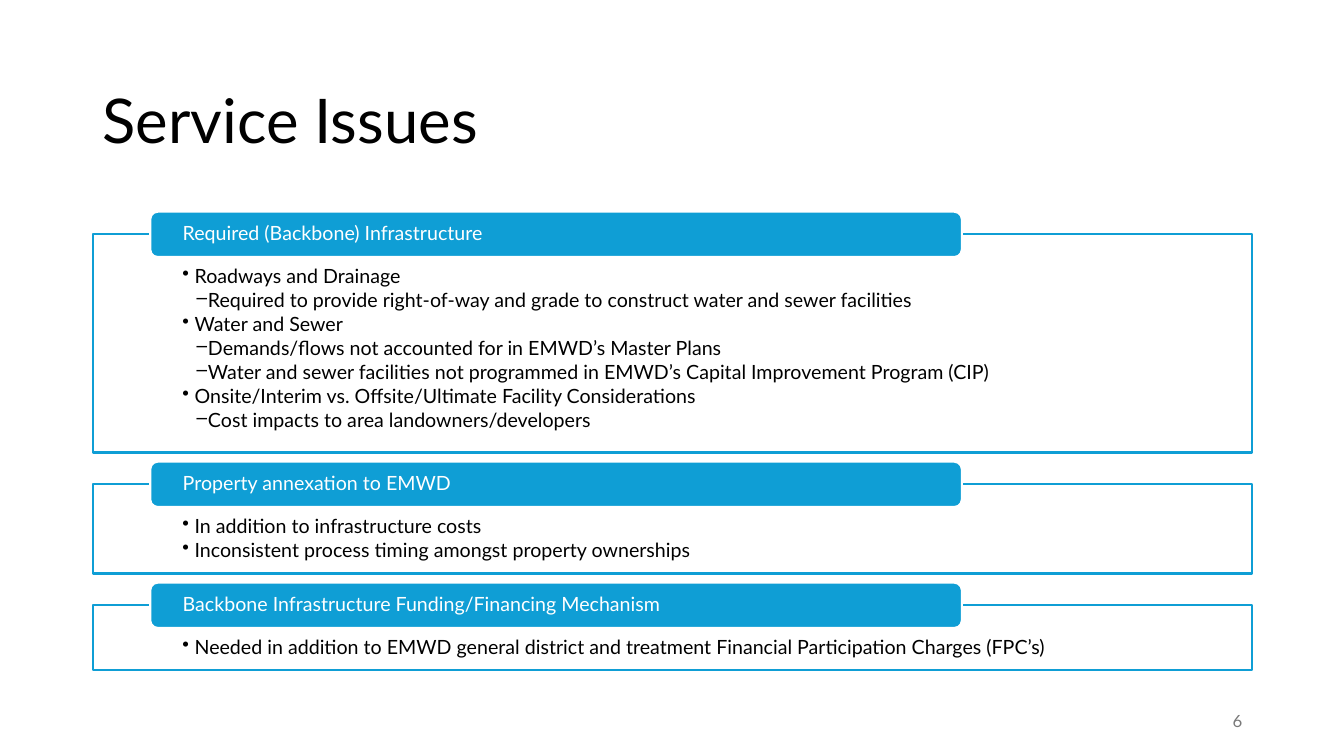
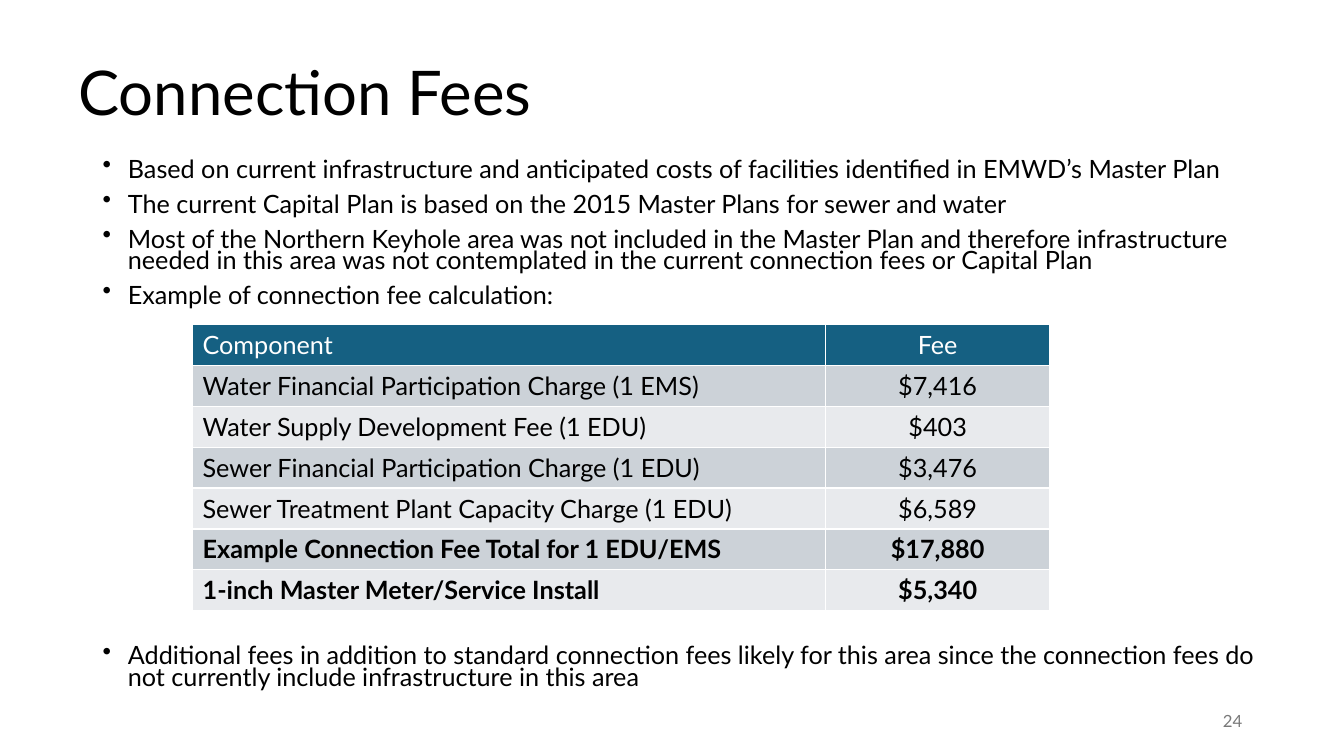
from dataclasses import dataclass
from typing import Any, NamedTuple

from lxml.etree import SubElement
from pptx import Presentation
from pptx.dml.color import RGBColor
from pptx.enum.shapes import MSO_SHAPE as Shape
from pptx.enum.text import MSO_ANCHOR as Anchor, PP_ALIGN as Align
from pptx.oxml.ns import qn
from pptx.util import Emu, Pt

EMU_PER_PX = 9144  # 100 px to the inch


@dataclass(frozen=True)
class Theme:
    font: str = "Lato"
    black: str = "000000"
    white: str = "FFFFFF"
    accent: str = "0F9ED5"
    grey: str = "797979"
    table_header: str = "156082"
    table_bands: tuple[str, str] = ("CCD2D8", "E8EAED")
    title_size: int = 44
    body_size: int = 18
    panel_size: int = 14
    number_size: int = 12


THEME = Theme()


class Box(NamedTuple):
    left: int
    top: int
    width: int
    height: int


class TextStyle(NamedTuple):
    size: int
    color: str = THEME.black
    bold: bool = False
    align: Align = Align.LEFT
    line_spacing: float = 1.0
    before: float = 0
    after: float = 0


class Bullet(NamedTuple):
    character: str
    indent: int
    hanging: int


class Line(NamedTuple):
    text: str
    bullet: Bullet | None = None


class Panel(NamedTuple):
    heading: str
    height: int
    lines: list[Line]


class Fee(NamedTuple):
    component: str
    amount: str
    bold: bool = False


TITLE = TextStyle(THEME.title_size, line_spacing=0.9)
NUMBER = TextStyle(THEME.number_size, THEME.grey, align=Align.RIGHT)
HEADING = TextStyle(THEME.panel_size, THEME.white, line_spacing=0.9)
PANEL_TEXT = TextStyle(THEME.panel_size, line_spacing=0.9, after=2.1)
BODY = TextStyle(THEME.body_size, line_spacing=0.7, before=10)

POINT = Bullet("•", 12, 12)
DASH = Bullet("‒", 25, 12)
BODY_POINT = Bullet("•", 25, 25)

NUMBER_BOX = Box(942, 695, 300, 40)
DEFAULT_MARGINS = (10, 5, 10, 5)

PANEL_LEFT, PANEL_TOP, PANEL_WIDTH, PANEL_GAP = 92, 232, 1150, 31
PANEL_MARGINS = (89, 32, 89, 11)
HEADING_LEFT, HEADING_RISE, HEADING_WIDTH, HEADING_HEIGHT = 149, 22, 805, 45
HEADING_MARGINS = (30, 0, 30, 0)

PANELS = [
    Panel("Required (Backbone) Infrastructure", 217, [
        Line("Roadways and Drainage", POINT),
        Line("Required to provide right-of-way and grade to construct water and sewer facilities", DASH),
        Line("Water and Sewer", POINT),
        Line("Demands/flows not accounted for in EMWD’s Master Plans", DASH),
        Line("Water and sewer facilities not programmed in EMWD’s Capital Improvement Program (CIP)", DASH),
        Line("Onsite/Interim vs. Offsite/Ultimate Facility Considerations", POINT),
        Line("Cost impacts to area landowners/developers", DASH),
    ]),
    Panel("Property annexation to EMWD", 89, [
        Line("In addition to infrastructure costs", POINT),
        Line("Inconsistent process timing amongst property ownerships", POINT),
    ]),
    Panel("Backbone Infrastructure Funding/Financing Mechanism", 65, [
        Line("Needed in addition to EMWD general district and treatment "
             "Financial Participation Charges (FPC’s)", POINT),
    ]),
]

FEE_BASIS = [
    Line("Based on current infrastructure and anticipated costs of facilities "
         "identified in EMWD’s Master Plan", BODY_POINT),
    Line("The current Capital Plan is based on the 2015 Master Plans for sewer and water", BODY_POINT),
    Line("Most of the Northern Keyhole area was not included in the Master Plan and therefore "
         "infrastructure needed in this area was not contemplated in the current connection "
         "fees or Capital Plan", BODY_POINT),
    Line("Example of connection fee calculation:", BODY_POINT),
]
ADDITIONAL_FEES = [
    Line("Additional fees in addition to standard connection fees likely for this area since "
         "the connection fees do not currently include infrastructure in this area", BODY_POINT),
]
FEES = [
    Fee("Component", "Fee"),
    Fee("Water Financial Participation Charge (1 EMS)", "$7,416"),
    Fee("Water Supply Development Fee (1 EDU)", "$403"),
    Fee("Sewer Financial Participation Charge (1 EDU)", "$3,476"),
    Fee("Sewer Treatment Plant Capacity Charge (1 EDU)", "$6,589"),
    Fee("Example Connection Fee Total for 1 EDU/EMS", "$17,880", True),
    Fee("1-inch Master Meter/Service Install", "$5,340", True),
]
FEE_BOX = Box(191, 322, 850, 284)
FEE_COLUMNS = (628, 222)


def px(length: int) -> Emu:
    return Emu(length * EMU_PER_PX)


def place(box: Box) -> tuple[Emu, ...]:
    return tuple(px(length) for length in box)


def set_format(target: Any, values: dict[str, Any]) -> None:
    for name, value in values.items():
        setattr(target, name, value)


def add_bullet(paragraph: Any, bullet: Bullet) -> None:
    properties = paragraph._p.get_or_add_pPr()
    properties.set("marL", str(px(bullet.indent)))
    properties.set("indent", str(-px(bullet.hanging)))
    SubElement(properties, qn("a:buChar"), char=bullet.character)


def write_lines(frame: Any, lines: list[Line], style: TextStyle) -> None:
    for index, line in enumerate(lines):
        paragraph = frame.add_paragraph() if index else frame.paragraphs[0]
        if line.bullet:
            add_bullet(paragraph, line.bullet)
        set_format(paragraph, {
            "alignment": style.align,
            "line_spacing": style.line_spacing,
            "space_before": Pt(style.before if index else 0),
            "space_after": Pt(style.after),
        })
        run = paragraph.add_run()
        run.text = line.text
        set_format(run.font, {"name": THEME.font, "size": Pt(style.size), "bold": style.bold})
        run.font.color.rgb = RGBColor.from_string(style.color)


def fill_frame(frame: Any, lines: list[Line], style: TextStyle, anchor: Anchor,
               margins: tuple[int, ...] = DEFAULT_MARGINS) -> None:
    left, top, right, bottom = (px(margin) for margin in margins)
    set_format(frame, {
        "word_wrap": True, "vertical_anchor": anchor,
        "margin_left": left, "margin_top": top, "margin_right": right, "margin_bottom": bottom,
    })
    write_lines(frame, lines, style)


def add_text(slide: Any, box: Box, lines: list[Line], style: TextStyle,
             anchor: Anchor = Anchor.TOP) -> None:
    fill_frame(slide.shapes.add_textbox(*place(box)).text_frame, lines, style, anchor)


def add_shape(slide: Any, kind: Shape, box: Box, fill: str, outline: str) -> Any:
    shape = slide.shapes.add_shape(kind, *place(box))
    shape.shadow.inherit = False
    shape.fill.solid()
    shape.fill.fore_color.rgb = RGBColor.from_string(fill)
    shape.line.color.rgb = RGBColor.from_string(outline)
    shape.line.width = Pt(1.5)
    return shape


def add_panel(slide: Any, panel: Panel, top: int) -> None:
    """Draw an outlined list with its heading tab over the top edge."""
    frame_box = Box(PANEL_LEFT, top, PANEL_WIDTH, panel.height)
    body = add_shape(slide, Shape.RECTANGLE, frame_box, THEME.white, THEME.accent)
    fill_frame(body.text_frame, panel.lines, PANEL_TEXT, Anchor.TOP, PANEL_MARGINS)
    heading_box = Box(HEADING_LEFT, top - HEADING_RISE, HEADING_WIDTH, HEADING_HEIGHT)
    heading = add_shape(slide, Shape.ROUNDED_RECTANGLE, heading_box, THEME.accent, THEME.white)
    fill_frame(heading.text_frame, [Line(panel.heading)], HEADING, Anchor.MIDDLE, HEADING_MARGINS)


def style_cell(cell: Any, fill: str) -> None:
    """Fill a cell and give it thin white borders."""
    cell.fill.solid()
    cell.fill.fore_color.rgb = RGBColor.from_string(fill)
    properties = cell._tc.get_or_add_tcPr()
    for index, side in enumerate(("lnL", "lnR", "lnT", "lnB")):
        border = SubElement(properties, qn(f"a:{side}"), w=str(Pt(1)))
        solid = SubElement(border, qn("a:solidFill"))
        SubElement(solid, qn("a:srgbClr"), val=THEME.white)
        properties.insert(index, border)


def add_fee_table(slide: Any) -> None:
    table = slide.shapes.add_table(len(FEES), len(FEE_COLUMNS), *place(FEE_BOX)).table
    for column, width in zip(table.columns, FEE_COLUMNS):
        column.width = px(width)
    for row, fee in enumerate(FEES):
        fill = THEME.table_bands[(row - 1) % 2] if row else THEME.table_header
        color = THEME.black if row else THEME.white
        for column, (text, align) in enumerate(((fee.component, Align.LEFT), (fee.amount, Align.CENTER))):
            cell = table.cell(row, column)
            style_cell(cell, fill)
            write_lines(cell.text_frame, [Line(text)],
                        TextStyle(THEME.body_size, color, fee.bold, align))


def add_slide(presentation: Any, title: str, title_box: Box, number: int) -> Any:
    """Add a blank slide with the shared title and page number."""
    slide = presentation.slides.add_slide(presentation.slide_layouts[6])
    add_text(slide, title_box, [Line(title)], TITLE, Anchor.MIDDLE)
    add_text(slide, NUMBER_BOX, [Line(str(number))], NUMBER, Anchor.MIDDLE)
    return slide


def add_service_issues(presentation: Any) -> None:
    slide = add_slide(presentation, "Service Issues", Box(92, 61, 1150, 124), 6)
    top = PANEL_TOP
    for panel in PANELS:
        add_panel(slide, panel, top)
        top += panel.height + PANEL_GAP


def add_connection_fees(presentation: Any) -> None:
    slide = add_slide(presentation, "Connection Fees", Box(68, 22, 1150, 145), 24)
    add_text(slide, Box(92, 155, 1185, 160), FEE_BASIS, BODY)
    add_fee_table(slide)
    add_text(slide, Box(92, 638, 1185, 60), ADDITIONAL_FEES, BODY)


def main() -> None:
    presentation = Presentation()
    set_format(presentation, {"slide_width": px(1333), "slide_height": px(750)})
    add_service_issues(presentation)
    add_connection_fees(presentation)
    presentation.save("out.pptx")


if __name__ == "__main__":
    main()
